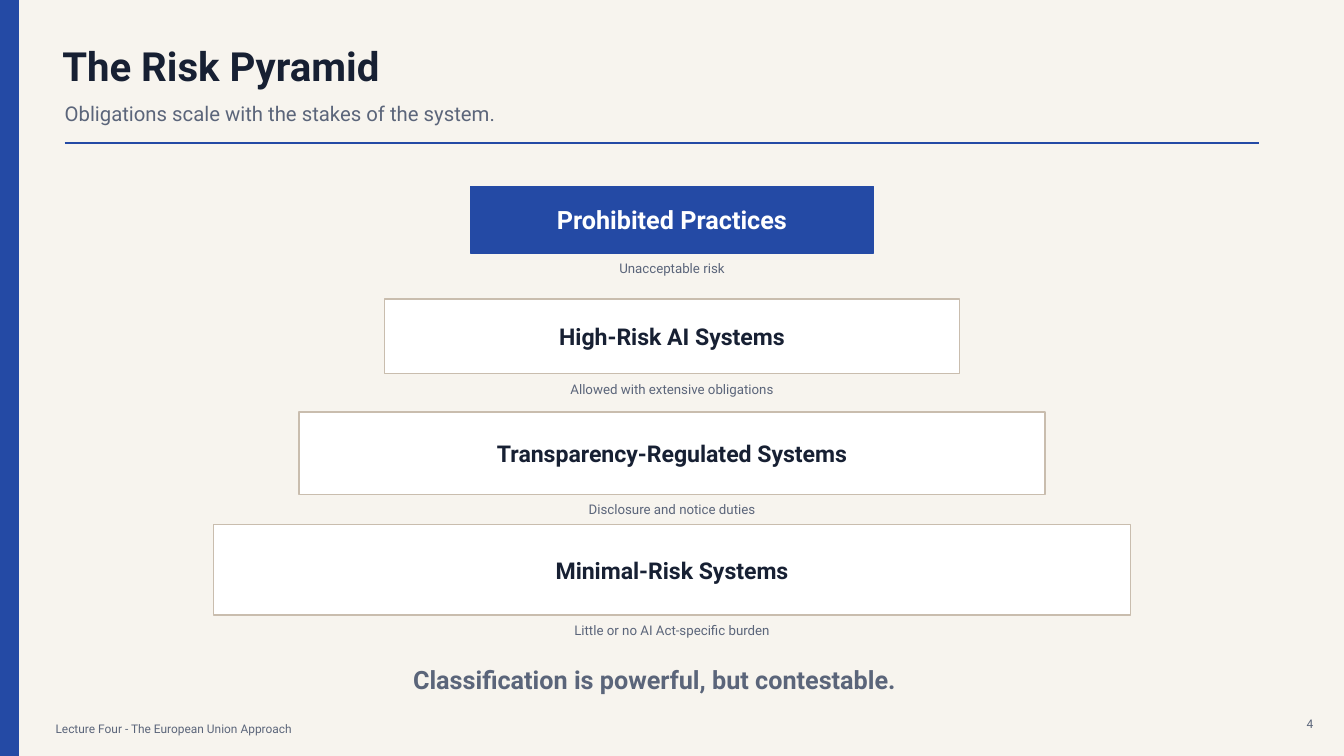
from lxml.etree import SubElement
from pptx import Presentation
from pptx.dml.color import RGBColor
from pptx.enum.shapes import MSO_CONNECTOR, MSO_SHAPE
from pptx.enum.text import MSO_ANCHOR, MSO_AUTO_SIZE, PP_ALIGN
from pptx.oxml.ns import qn
from pptx.util import Cm, Pt

PAPER = RGBColor(0xF7, 0xF4, 0xEE)
BLUE = RGBColor(0x24, 0x4A, 0xA5)
NAVY = RGBColor(0x17, 0x20, 0x33)
SLATE = RGBColor(0x5B, 0x65, 0x7A)
SAND = RGBColor(0xC9, 0xBD, 0xAE)
WHITE = RGBColor(0xFF, 0xFF, 0xFF)

FRAME = {
    "margin_left": 0,
    "margin_top": 0,
    "margin_right": 0,
    "margin_bottom": 0,
    "word_wrap": True,
    "auto_size": MSO_AUTO_SIZE.NONE,
    "vertical_anchor": MSO_ANCHOR.MIDDLE,
}
TIERS = [
    ("Prohibited Practices", "Unacceptable risk"),
    ("High-Risk AI Systems", "Allowed with extensive obligations"),
    ("Transparency-Regulated Systems", "Disclosure and notice duties"),
    ("Minimal-Risk Systems", "Little or no AI Act-specific burden"),
]
WIDTH, HEIGHT = 33.87, 19.05


def apply(target, values):
    for name, value in values.items():
        setattr(target, name, value)


def write(shape, text, size, color, bold=False, align=PP_ALIGN.LEFT):
    frame = shape.text_frame
    apply(frame, FRAME)
    line = frame.paragraphs[0]
    line.alignment = align
    run = line.add_run()
    run.text = text
    apply(run.font, {"name": "Roboto", "size": Pt(size), "bold": bold})
    run.font.color.rgb = color


def add_label(slide, box, *args, **style):
    shape = slide.shapes.add_textbox(*map(Cm, box))
    write(shape, *args, **style)


def add_block(slide, box, fill, edge):
    shape = slide.shapes.add_shape(MSO_SHAPE.RECTANGLE, *map(Cm, box))
    shape.shadow.inherit = False
    shape.fill.solid()
    shape.fill.fore_color.rgb = fill
    shape.line.color.rgb = edge
    shape.line.width = Pt(1)
    return shape


def add_title(slide, box, text):
    title = slide.shapes.title
    apply(title, dict(zip(("left", "top", "width", "height"), map(Cm, box))))
    write(title, text, 28.7, NAVY, bold=True)


def add_rule(slide, left, right, top):
    ends = map(Cm, (left, top, right, top))
    rule = slide.shapes.add_connector(MSO_CONNECTOR.STRAIGHT, *ends)
    rule.line.color.rgb = BLUE
    rule.line.width = Pt(1.25)
    SubElement(rule._element.spPr, qn("a:effectLst"))


def add_tier(slide, index, name, note):
    width = 10.16 + 4.32 * index
    height = 1.68 + 0.2 * index
    left = (WIDTH - width) / 2
    top = 4.7 + 2.84 * index
    if index == 0:
        fill, edge, color, size = BLUE, BLUE, WHITE, 18
    else:
        fill, edge, color, size = WHITE, SAND, NAVY, 16.5
    block = add_block(slide, (left, top, width, height), fill, edge)
    write(block, name, size, color, bold=True, align=PP_ALIGN.CENTER)
    add_label(slide, (left, top + height + 0.1, width, 0.56),
              note, 9.5, SLATE, align=PP_ALIGN.CENTER)


def main():
    deck = Presentation()
    apply(deck, {"slide_width": Cm(WIDTH), "slide_height": Cm(HEIGHT)})
    slide = deck.slides.add_slide(deck.slide_layouts[5])
    slide.background.fill.solid()
    slide.background.fill.fore_color.rgb = PAPER

    add_block(slide, (0, 0, 0.46, HEIGHT), BLUE, BLUE)
    add_title(slide, (1.57, 1.07, 24.89, 1.14), "The Risk Pyramid")
    add_label(slide, (1.63, 2.41, 27.69, 0.89),
              "Obligations scale with the stakes of the system.", 14.5, SLATE)
    add_rule(slide, 1.63, 31.72, 3.61)
    for index, (name, note) in enumerate(TIERS):
        add_tier(slide, index, name, note)
    add_label(slide, (10.41, 16.66, 13.21, 0.91),
              "Classification is powerful, but contestable.", 18, SLATE, bold=True)
    add_label(slide, (1.4, 18.11, 22.86, 0.51),
              "Lecture Four - The European Union Approach", 8.5, SLATE)
    add_label(slide, (32.39, 17.98, 0.71, 0.51),
              "4", 8.5, SLATE, align=PP_ALIGN.RIGHT)
    deck.save("out.pptx")


if __name__ == "__main__":
    main()
